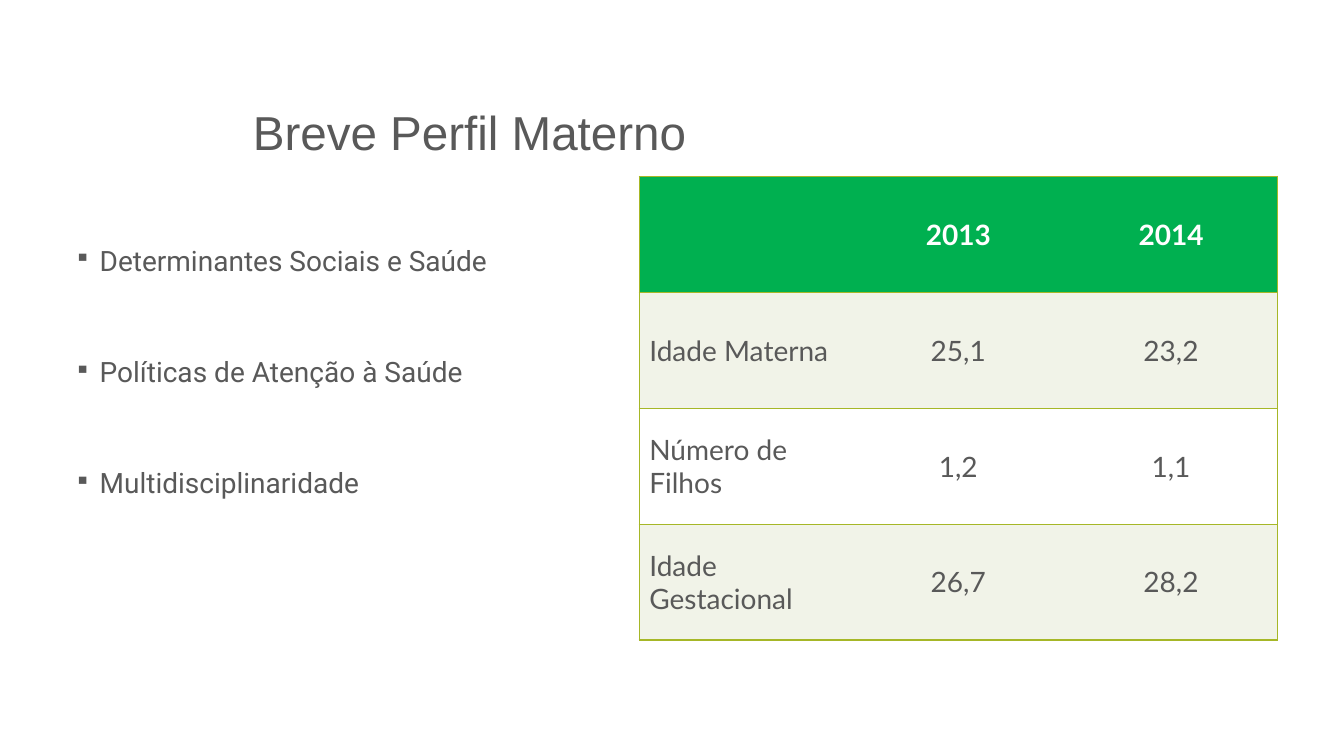
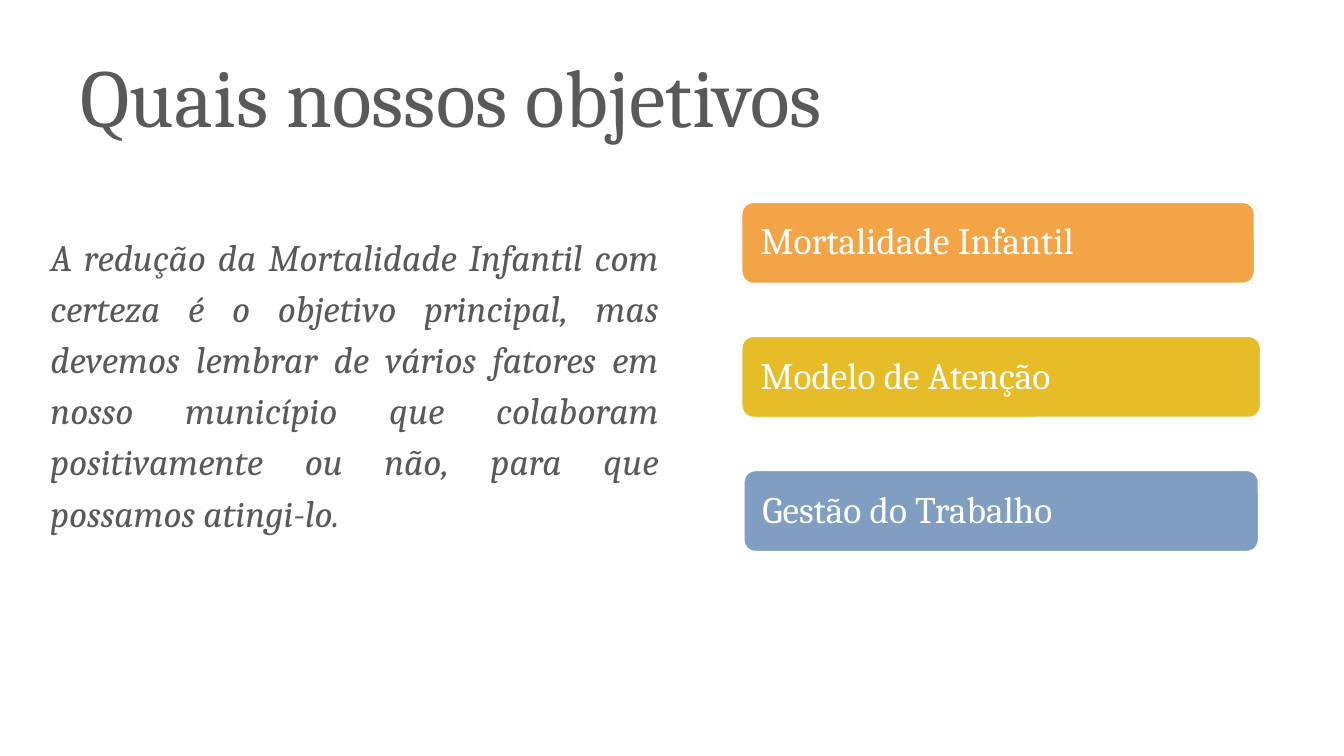
from pptx import Presentation, util as u
from pptx.dml.color import RGBColor
from pptx.enum import shapes, text
from pptx.oxml import parse_xml
from pptx.oxml.ns import nsdecls

PX = 9144

THEME = {
    "ink": "595959",
    "white": "FFFFFF",
    "header": "00B050",
    "band": "F1F3E8",
    "rule": "A6B727",
    "profile_title": {"name": "Arial", "size": 34},
    "goals_title": {"name": "Cambria", "size": 58.7},
    "goal": {"name": "Cambria", "size": 26.7},
    "topic": {"name": "Roboto", "size": 20},
    "table": {"name": "Lato", "size": 20},
}

LEFT, CENTER, JUSTIFY = text.PP_ALIGN.LEFT, text.PP_ALIGN.CENTER, text.PP_ALIGN.JUSTIFY
TOP, MIDDLE, BOTTOM = text.MSO_ANCHOR.TOP, text.MSO_ANCHOR.MIDDLE, text.MSO_ANCHOR.BOTTOM

PROFILE_TITLE = "Breve Perfil Materno"
TOPICS = [
    "Determinantes Sociais e Saúde",
    "Políticas de Atenção à Saúde",
    "Multidisciplinaridade",
]
PROFILE = [
    ("", "2013", "2014"),
    ("Idade Materna", "25,1", "23,2"),
    ("Número de Filhos", "1,2", "1,1"),
    ("Idade Gestacional", "26,7", "28,2"),
]
GOALS_TITLE = "Quais nossos objetivos"
GOALS_TEXT = (
    "A redução da Mortalidade Infantil com certeza é o objetivo principal, "
    "mas devemos lembrar de vários fatores em nosso município que colaboram "
    "positivamente ou não, para que possamos atingi-lo."
)
GOALS = [
    ("Mortalidade Infantil", "F3A447", 733, 514),
    ("Modelo de Atenção", "E7BC29", 733, 520),
    ("Gestão do Trabalho", "809EC2", 735, 516),
]


def px(*lengths):
    return [u.Emu(length * PX) for length in lengths]


def apply(target, values):
    for key, value in values.items():
        setattr(target, key, value)


def style_font(font, face, color, **extra):
    apply(font, {"name": face["name"], "size": u.Pt(face["size"]), **extra})
    font.color.rgb = RGBColor.from_string(color)


def paint(fill, color):
    fill.solid()
    fill.fore_color.rgb = RGBColor.from_string(color)


def add_bullet(paragraph):
    props = paragraph._p.get_or_add_pPr()
    props.set("marL", str(30 * PX))
    props.set("indent", str(-25 * PX))
    for tag in (
        f'<a:buClr {nsdecls("a")}><a:srgbClr val="{THEME["ink"]}"/></a:buClr>',
        f'<a:buSzPct {nsdecls("a")} val="80000"/>',
        f'<a:buChar {nsdecls("a")} char="▪"/>',
    ):
        props.append(parse_xml(tag))


def write(frame, lines, face, color, anchor=TOP, inset=(10, 5), align=LEFT,
          spacing=1.0, gap=0, bullet=False, **extra):
    across, down = px(*inset)
    apply(frame, {"word_wrap": True, "vertical_anchor": anchor,
                  "margin_left": across, "margin_right": across,
                  "margin_top": down, "margin_bottom": down})
    for index, line in enumerate(lines):
        paragraph = frame.add_paragraph() if index else frame.paragraphs[0]
        paragraph.text = line
        apply(paragraph, {"alignment": align, "line_spacing": spacing})
        if index and gap:
            paragraph.space_before = u.Pt(gap)
        if bullet:
            add_bullet(paragraph)
        style_font(paragraph.runs[0].font, face, color, **extra)


def add_text(slide, place, lines, face, **layout):
    box = slide.shapes.add_textbox(*px(*place))
    write(box.text_frame, lines, face, THEME["ink"], **layout)


def set_borders(cell, visible):
    props = cell._tc.get_or_add_tcPr()
    for side in "LRTB":
        line = (f'<a:solidFill><a:srgbClr val="{THEME["rule"]}"/></a:solidFill>'
                if side in visible else "<a:noFill/>")
        props.append(parse_xml(
            f'<a:ln{side} {nsdecls("a")} w="12700">{line}</a:ln{side}>'))


def add_profile_table(slide, left, top, column_width, row_height):
    columns = len(PROFILE[0])
    table = slide.shapes.add_table(
        len(PROFILE), columns,
        *px(left, top, column_width * columns, row_height * len(PROFILE))).table
    for row, values in enumerate(PROFILE):
        header = row == 0
        fill = THEME["header"] if header else THEME["band" if row % 2 else "white"]
        for column, value in enumerate(values):
            cell = table.cell(row, column)
            sides = "TB" + "L" * (column == 0) + "R" * (column == columns - 1)
            set_borders(cell, sides)
            paint(cell.fill, fill)
            cell.vertical_anchor = MIDDLE
            if value:
                paragraph = cell.text_frame.paragraphs[0]
                paragraph.text = value
                paragraph.alignment = CENTER if column else LEFT
                style_font(paragraph.runs[0].font, THEME["table"],
                           THEME["white" if header else "ink"], bold=header)


def add_goal(slide, label, color, place):
    goal = slide.shapes.add_shape(shapes.MSO_SHAPE.ROUNDED_RECTANGLE, *px(*place))
    goal.shadow.inherit = False
    paint(goal.fill, color)
    paint(goal.line.fill, THEME["white"])
    goal.line.width = u.Pt(5)
    write(goal.text_frame, [label], THEME["goal"], THEME["white"],
          anchor=MIDDLE, inset=(17, 0), spacing=0.9)


def build_profile(slide):
    add_text(slide, (241, 33, 1092, 131), [PROFILE_TITLE], THEME["profile_title"],
             anchor=BOTTOM, spacing=0.9)
    add_text(slide, (59, 240, 500, 395), TOPICS, THEME["topic"],
             spacing=0.9, gap=58, bullet=True)
    add_profile_table(slide, 634, 175, 211, 115)


def build_goals(slide):
    add_text(slide, (67, 17, 1200, 133), [GOALS_TITLE], THEME["goals_title"],
             anchor=BOTTOM, inset=(13, 7))
    add_text(slide, (37, 219, 630, 331), [GOALS_TEXT], THEME["goal"],
             inset=(13, 7), align=JUSTIFY, spacing=1.14, italic=True)
    for index, (label, color, left, width) in enumerate(GOALS):
        add_goal(slide, label, color, (left, 198 + 133 * index, width, 86))


def main():
    deck = Presentation()
    deck.slide_width, deck.slide_height = px(1333, 750)
    for build in (build_profile, build_goals):
        build(deck.slides.add_slide(deck.slide_layouts[6]))
    deck.save("out.pptx")


if __name__ == "__main__":
    main()
